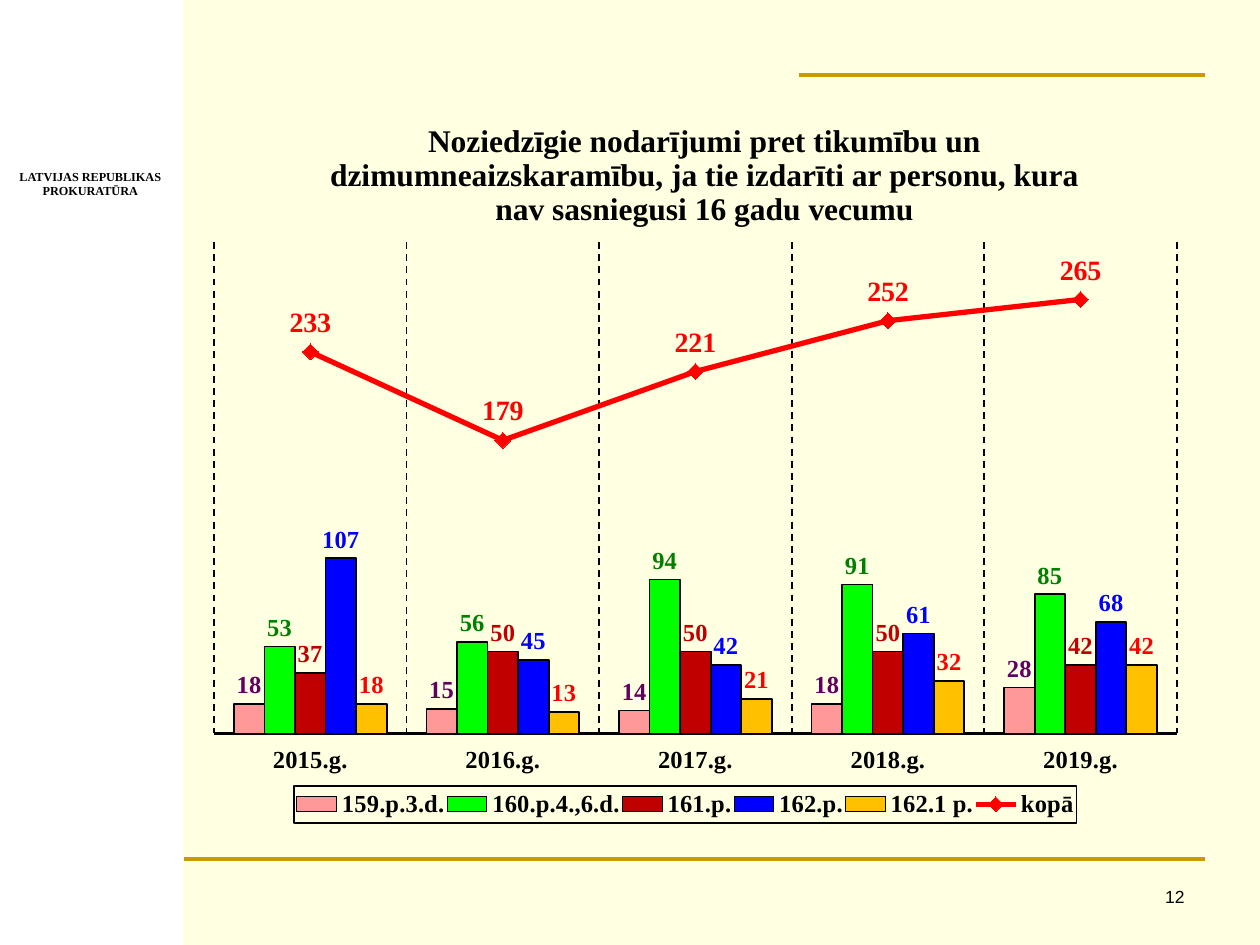
from lxml.etree import SubElement as Sub
from pptx import Presentation
from pptx.chart.data import CategoryChartData as Data
from pptx.dml.color import RGBColor as Rgb
from pptx.enum.chart import XL_CHART_TYPE as Kind
from pptx.enum.chart import XL_LABEL_POSITION as Pos
from pptx.enum.chart import XL_LEGEND_POSITION as Side
from pptx.enum.chart import XL_MARKER_STYLE as Mark
from pptx.enum.chart import XL_TICK_LABEL_POSITION as Tick
from pptx.enum.chart import XL_TICK_MARK as Tip
from pptx.enum.dml import MSO_LINE as Dash
from pptx.enum.shapes import MSO_CONNECTOR as Link
from pptx.enum.shapes import MSO_SHAPE as Form
from pptx.enum.text import MSO_AUTO_SIZE as Fit
from pptx.enum.text import PP_ALIGN as Align
from pptx.oxml.ns import qn
from pptx.util import Cm, Pt

CREAM = Rgb(0xFF, 0xFF, 0xE1)
WHITE = Rgb(0xFF, 0xFF, 0xFF)
BLACK = Rgb(0, 0, 0)
GOLD = Rgb(0xCC, 0x99, 0)
PINK = Rgb(0xFF, 0x99, 0x99)
PLUM = Rgb(0x61, 0, 0x61)
LIME = Rgb(0, 0xFF, 0)
GREEN = Rgb(0, 0x80, 0)
WINE = Rgb(0xC0, 0, 0)
BLUE = Rgb(0, 0, 0xFF)
AMBER = Rgb(0xFF, 0xC0, 0)
RED = Rgb(0xFF, 0, 0)

TITLE = ("Noziedzīgie nodarījumi pret tikumību un dzimumneaizskaramību, "
         "ja tie izdarīti ar personu, kura nav sasniegusi 16 gadu vecumu")
YEARS = [f"{year}.g." for year in range(2015, 2020)]
# Name, values, fill colour, label colour
BARS = [
    ("159.p.3.d.", (18, 15, 14, 18, 28), PINK, PLUM),
    ("160.p.4.,6.d.", (53, 56, 94, 91, 85), LIME, GREEN),
    ("161.p.", (37, 50, 50, 50, 42), WINE, WINE),
    ("162.p.", (107, 45, 42, 61, 68), BLUE, BLUE),
    ("162.1 p.", (18, 13, 21, 32, 42), AMBER, RED),
]
TOTAL = ("kopā", (233, 179, 221, 252, 265))


class Deck:
    serif, sans = "Times New Roman", "Arial"

    def __init__(self):
        self.deck = Presentation()
        self.deck.slide_width, self.deck.slide_height = Cm(25.4), Cm(19.05)
        self.slide = self.deck.slides.add_slide(self.deck.slide_layouts[6])
        self.slide.background.fill.solid()
        self.slide.background.fill.fore_color.rgb = CREAM

    def style(self, font, size, color=BLACK, bold=True, name=serif):
        font.size, font.bold, font.name = Pt(size), bold, name
        font.color.rgb = color

    def stroke(self, line, color, width):
        line.color.rgb, line.width = color, Pt(width)

    def panel(self, x, y, w, h, color):
        box = self.slide.shapes.add_shape(
            Form.RECTANGLE, Cm(x), Cm(y), Cm(w), Cm(h))
        box.shadow.inherit = False
        box.fill.solid()
        box.fill.fore_color.rgb = color
        box.line.fill.background()

    def rule(self, left, right, y):
        line = self.slide.shapes.add_connector(
            Link.STRAIGHT, Cm(left), Cm(y), Cm(right), Cm(y))
        self.stroke(line.line, GOLD, 2.25)
        Sub(line._element.spPr, qn("a:effectLst"))

    def text(self, x, y, w, h, lines, align, wrap=True, **look):
        box = self.slide.shapes.add_textbox(Cm(x), Cm(y), Cm(w), Cm(h))
        frame = box.text_frame
        frame.text = "\n".join(lines)
        frame.word_wrap = wrap
        if not wrap:
            frame.auto_size = Fit.SHAPE_TO_FIT_TEXT
        for para in frame.paragraphs:
            para.alignment = align
            self.style(para.font, **look)

    def place(self, part, x, y, w=None, h=None, inner=False):
        """Fix a chart part at fractions of the chart area."""
        node = part.find(qn("c:layout"))
        if node is None:
            node = part.makeelement(qn("c:layout"))
            spot = {"title": "tx", "legend": "legendPos"}.get(
                part.tag.split("}")[1])
            if spot:
                part.find(qn("c:" + spot)).addnext(node)
            else:
                part.insert(0, node)
        grid = Sub(node, qn("c:manualLayout"))
        if inner:
            Sub(grid, qn("c:layoutTarget")).set("val", "inner")
        for key in "xMode", "yMode":
            Sub(grid, qn("c:" + key)).set("val", "edge")
        for key, size in zip("xywh", (x, y, w, h)):
            if size is not None:
                Sub(grid, qn("c:" + key)).set("val", str(size))

    def labels(self, ser, pos, size, color):
        tags = ser.data_labels
        tags.show_value, tags.position = True, pos
        self.style(tags.font, size, color)

    def split(self, chart):
        """Move the last bar series to a line plot on the same axes."""
        bar = chart.plots[0]._element
        ser = bar.findall(qn("c:ser"))[-1]
        flag = ser.find(qn("c:invertIfNegative"))
        if flag is not None:
            ser.remove(flag)
        line = bar.makeelement(qn("c:lineChart"))
        bar.addnext(line)
        Sub(line, qn("c:grouping")).set("val", "standard")
        Sub(line, qn("c:varyColors")).set("val", "0")
        line.append(ser)
        Sub(line, qn("c:marker")).set("val", "1")
        for axis in bar.findall(qn("c:axId")):
            Sub(line, qn("c:axId")).set("val", axis.get("val"))
        return chart.plots[1].series[0]

    def chart(self, x, y, w, h):
        data = Data()
        data.categories = YEARS
        for name, vals, *_ in BARS + [TOTAL]:
            data.add_series(name, vals)
        chart = self.slide.shapes.add_chart(
            Kind.COLUMN_CLUSTERED, Cm(x), Cm(y), Cm(w), Cm(h), data).chart
        self.style(chart.font, 10, bold=False)

        # Title
        chart.has_title = True
        frame = chart.chart_title.text_frame
        frame.text = TITLE
        self.style(frame.paragraphs[0].font, 18)
        chart.chart_title.include_in_layout = False

        # Axes
        axis = chart.category_axis
        axis.major_tick_mark = Tip.NONE
        axis.tick_label_position = Tick.LOW
        self.style(axis.tick_labels.font, 14)
        self.stroke(axis.format.line, BLACK, 1.5)
        axis.has_major_gridlines = True
        grid = axis.major_gridlines.format.line
        self.stroke(grid, BLACK, 1)
        grid.dash_style = Dash.DASH
        scale = chart.value_axis
        scale.minimum_scale, scale.maximum_scale = 0, 300
        scale.has_major_gridlines = scale.visible = False

        # Columns
        total = self.split(chart)
        plot = chart.plots[0]
        plot.gap_width, plot.overlap, plot.vary_by_categories = 130, 0, False
        for ser, (_, _, color, ink) in zip(plot.series, BARS):
            ser.format.fill.solid()
            ser.format.fill.fore_color.rgb = color
            self.stroke(ser.format.line, BLACK, 1)
            self.labels(ser, Pos.OUTSIDE_END, 14, ink)

        # Total line
        total.smooth = False
        self.stroke(total.format.line, RED, 3)
        total.marker.style, total.marker.size = Mark.DIAMOND, 9
        total.marker.format.fill.solid()
        total.marker.format.fill.fore_color.rgb = RED
        self.stroke(total.marker.format.line, RED, 1)
        self.labels(total, Pos.ABOVE, 16, RED)

        # Legend
        chart.has_legend = True
        key = chart.legend
        key.position, key.include_in_layout = Side.BOTTOM, False
        self.style(key.font, 14)
        self.place(key._element, 0.1, 0.94, 0.78, 0.05)
        look = key._element.makeelement(qn("c:spPr"))
        key._element.find(qn("c:txPr")).addprevious(look)
        edge = Sub(look, qn("a:ln"), w=str(Pt(1)))
        Sub(Sub(edge, qn("a:solidFill")), qn("a:srgbClr"), val=str(BLACK))

        # Fixed places
        self.place(chart.chart_title._element, 0.13, 0.04)
        self.place(plot._element.getparent(), 0.02, 0.21, 0.96, 0.66, True)


def main():
    page = Deck()
    # Side panel and gold rules
    page.panel(0, 0, 3.7, 19.05, WHITE)
    page.rule(3.7, 24.3, 17.32)
    page.rule(16.1, 24.3, 1.52)
    page.text(0.13, 3.28, 3.38, 0.84, ["LATVIJAS REPUBLIKAS", "PROKURATŪRA"],
              Align.CENTER, wrap=False, size=7)
    # Slide number
    page.text(18.85, 17.73, 5.28, 0.89, ["12"], Align.RIGHT,
              size=10, bold=False, name=page.sans)
    # Crimes by section and in total
    page.chart(3.91, 1.73, 20.22, 15.01)
    page.deck.save("out.pptx")


if __name__ == "__main__":
    main()
